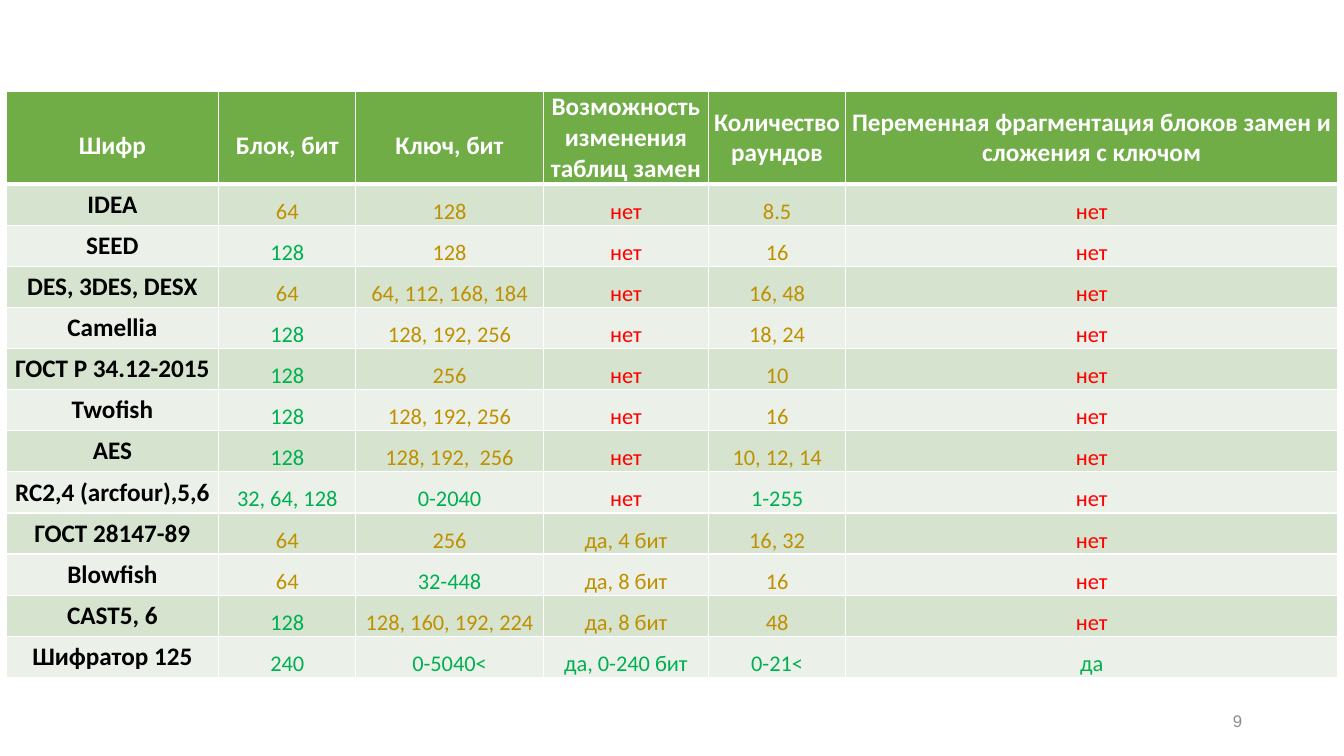
from dataclasses import astuple, dataclass

from lxml.etree import SubElement
from pptx import Presentation
from pptx.dml.color import RGBColor
from pptx.enum.text import MSO_ANCHOR, PP_ALIGN
from pptx.oxml.ns import qn
from pptx.slide import Slide
from pptx.table import Table, _Cell
from pptx.text.text import TextFrame
from pptx.util import Emu, Inches, Pt

WHITE = RGBColor(0xFF, 0xFF, 0xFF)
BLACK = RGBColor(0, 0, 0)
GREY = RGBColor(0x8C, 0x8C, 0x8C)
HEADER_GREEN = RGBColor(0x70, 0xAD, 0x47)
BAND_DARK = RGBColor(0xD5, 0xE3, 0xCF)
BAND_LIGHT = RGBColor(0xEB, 0xF1, 0xE9)
STRONG = RGBColor(0x00, 0xB0, 0x50)
FAIR = RGBColor(0xBF, 0x90, 0x00)
WEAK = RGBColor(0xFF, 0x00, 0x00)

SLIDE_WIDTH = Inches(13.33)
SLIDE_HEIGHT = Inches(7.5)
GRID_STEPS = 100
HEADER_ROW = 12.2
BODY_ROW = 5.43


@dataclass
class Column:
    title: str
    width: float
    spacing: float


@dataclass
class Cipher:
    name: str
    block: str
    key: str
    substitution: str
    rounds: str
    fragmentation: str = "нет"


COLUMNS = [
    Column("Шифр", 15.83, 1.5),
    Column("Блок, бит", 10.2, 1.5),
    Column("Ключ, бит", 13.95, 1.5),
    Column("Возможность изменения таблиц замен", 12.3, 1),
    Column("Количество раундов", 10.2, 1),
    Column("Переменная фрагментация блоков замен и сложения с ключом", 36.61, 1),
]

CIPHERS = [
    Cipher("IDEA", "64", "128", "нет", "8.5"),
    Cipher("SEED", "128", "128", "нет", "16"),
    Cipher("DES, 3DES, DESX", "64", "64, 112, 168, 184", "нет", "16, 48"),
    Cipher("Сamellia", "128", "128, 192, 256", "нет", "18, 24"),
    Cipher("ГОСТ Р 34.12-2015", "128", "256", "нет", "10"),
    Cipher("Twofish", "128", "128, 192, 256", "нет", "16"),
    Cipher("AES", "128", "128, 192,  256", "нет", "10, 12, 14"),
    Cipher("RC2,4 (arcfour),5,6", "32, 64, 128", "0-2040", "нет", "1-255"),
    Cipher("ГОСТ 28147-89", "64", "256", "да, 4 бит", "16, 32"),
    Cipher("Blowfish", "64", "32-448", "да, 8 бит", "16"),
    Cipher("CAST5, 6", "128", "128, 160, 192, 224", "да, 8 бит", "48"),
    Cipher("Шифратор 125", "240", "0-5040<", "да, 0-240 бит", "0-21<", "да"),
]


def across(steps: float) -> Emu:
    return Emu(round(SLIDE_WIDTH * steps / GRID_STEPS))


def down(steps: float) -> Emu:
    return Emu(round(SLIDE_HEIGHT * steps / GRID_STEPS))


def write_text(frame: TextFrame, text: str, *, size: float, color: RGBColor,
               bold: bool = False, font: str = "Calibri", spacing: float = 1,
               align: PP_ALIGN = PP_ALIGN.CENTER) -> None:
    para = frame.paragraphs[0]
    para.alignment = align
    para.line_spacing = spacing
    span = para.add_run()
    span.text = text
    span.font.name = font
    span.font.size = Pt(size)
    span.font.bold = bold
    span.font.color.rgb = color


def rate(value: str, column: int) -> RGBColor:
    if value == "нет":
        return WEAK
    wide_block = column == 1 and value != "64"
    return STRONG if wide_block or "-" in value or value == "да" else FAIR


def style_cell(cell: _Cell, fill: RGBColor, top: float = 1, bottom: float = 1) -> None:
    cell.vertical_anchor = MSO_ANCHOR.MIDDLE
    cell.margin_left = cell.margin_right = Inches(0.05)
    cell.margin_top = cell.margin_bottom = 0
    properties = cell._tc.get_or_add_tcPr()
    for side, width in (("L", 1), ("R", 1), ("T", top), ("B", bottom)):
        line = SubElement(properties, qn(f"a:ln{side}"), w=str(Pt(width)))
        solid = SubElement(line, qn("a:solidFill"))
        SubElement(solid, qn("a:srgbClr"), val=str(WHITE))
    cell.fill.solid()
    cell.fill.fore_color.rgb = fill


def fill_header(table: Table) -> None:
    table.rows[0].height = down(HEADER_ROW)
    for index, column in enumerate(COLUMNS):
        table.columns[index].width = across(column.width)
        cell = table.cell(0, index)
        style_cell(cell, HEADER_GREEN, bottom=3)
        write_text(cell.text_frame, column.title, size=18, color=WHITE,
                   bold=True, spacing=column.spacing)


def fill_cipher(table: Table, row: int, cipher: Cipher) -> None:
    table.rows[row].height = down(BODY_ROW)
    for index, value in enumerate(astuple(cipher)):
        cell = table.cell(row, index)
        style_cell(cell, BAND_DARK if row % 2 else BAND_LIGHT, top=3 if row == 1 else 1)
        if index == 0:
            write_text(cell.text_frame, value, size=18, color=BLACK, bold=True)
        else:
            write_text(cell.text_frame, value, size=16, color=rate(value, index),
                       spacing=1.5)


def add_cipher_table(page: Slide) -> None:
    width = across(sum(column.width for column in COLUMNS))
    height = down(HEADER_ROW + BODY_ROW * len(CIPHERS))
    table = page.shapes.add_table(len(CIPHERS) + 1, len(COLUMNS), across(0.45),
                                  down(12.13), width, height).table
    fill_header(table)
    for row, cipher in enumerate(CIPHERS, start=1):
        fill_cipher(table, row, cipher)


def add_page_number(page: Slide) -> None:
    box = page.shapes.add_textbox(across(70.67), down(92.67), across(22.5), down(5.33))
    box.text_frame.word_wrap = True
    box.text_frame.vertical_anchor = MSO_ANCHOR.MIDDLE
    write_text(box.text_frame, "9", size=12, color=GREY, font="Arial",
               align=PP_ALIGN.RIGHT)


def main() -> None:
    deck = Presentation()
    deck.slide_width = SLIDE_WIDTH
    deck.slide_height = SLIDE_HEIGHT
    page = deck.slides.add_slide(deck.slide_layouts[6])
    add_cipher_table(page)
    add_page_number(page)
    deck.save("out.pptx")


if __name__ == "__main__":
    main()
